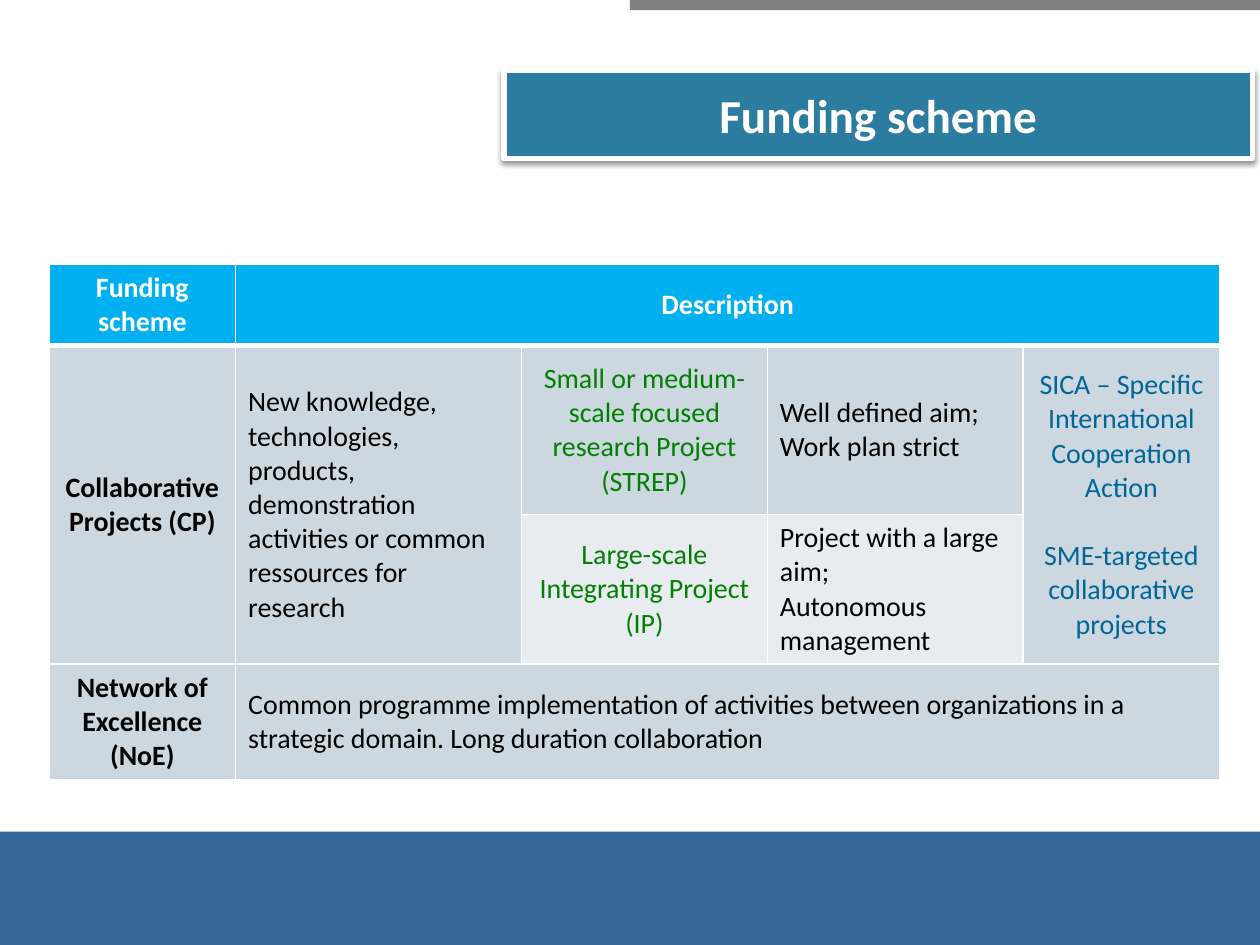
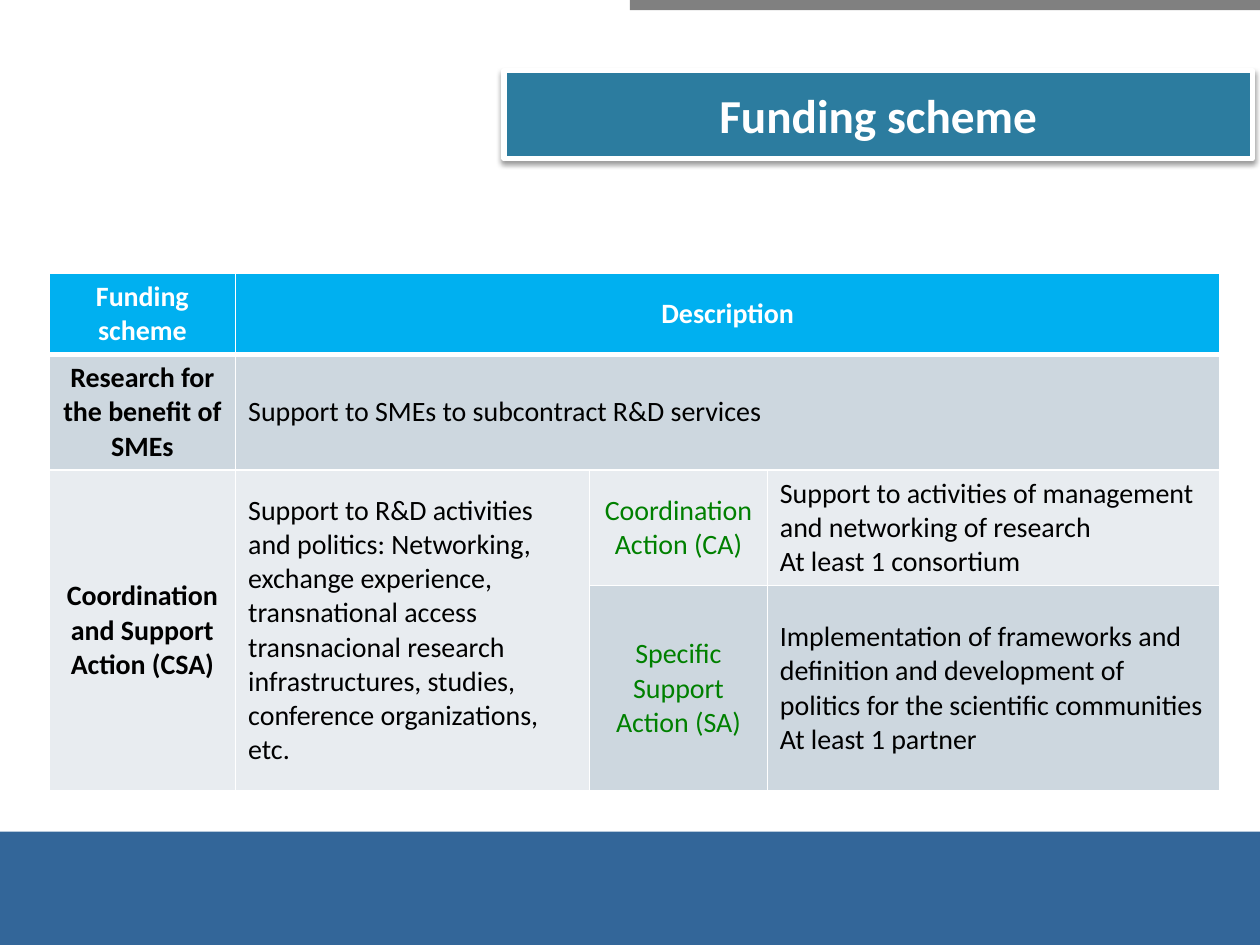
from lxml import etree
from pptx import Presentation
from pptx.dml.color import RGBColor
from pptx.enum.shapes import MSO_SHAPE
from pptx.enum.text import MSO_ANCHOR, MSO_AUTO_SIZE, PP_ALIGN
from pptx.oxml import parse_xml
from pptx.oxml.ns import nsdecls, qn
from pptx.util import Inches, Pt

RECT = MSO_SHAPE.RECTANGLE
MIDDLE = MSO_ANCHOR.MIDDLE
NO_AUTOFIT = MSO_AUTO_SIZE.NONE
LEFT, CENTER = PP_ALIGN.LEFT, PP_ALIGN.CENTER

WHITE = RGBColor(0xFF, 0xFF, 0xFF)
BLACK = RGBColor(0x00, 0x00, 0x00)
GRAY = RGBColor(0x80, 0x80, 0x80)
FOOTER_BLUE = RGBColor(0x33, 0x66, 0x99)
TITLE_TEAL = RGBColor(0x2C, 0x7C, 0x9F)
HEADER_CYAN = RGBColor(0x00, 0xB0, 0xF0)
ROW_DARK = RGBColor(0xCD, 0xD7, 0xDF)
ROW_LIGHT = RGBColor(0xE8, 0xEC, 0xF0)
GREEN = RGBColor(0x00, 0x80, 0x00)
BLUE = RGBColor(0x00, 0x66, 0x99)

HEADER = (WHITE, True, CENTER)
SCHEME = (BLACK, True, CENTER)
BODY = (BLACK, False, LEFT)
PROJECT = (GREEN, False, CENTER)
TARGETED = (BLUE, False, CENTER)

TITLE_SHADOW = (
    f'<a:effectLst {nsdecls("a")}>'
    '<a:outerShdw blurRad="39370" dist="20320" dir="5400000" rotWithShape="0">'
    '<a:srgbClr val="000000"><a:alpha val="38000"/></a:srgbClr>'
    '</a:outerShdw></a:effectLst>'
)
ROUND_RECT = f'<a:prstGeom {nsdecls("a")} prst="roundRect"><a:avLst/></a:prstGeom>'


class Deck:
    font = "Calibri"
    title_size = Pt(27)
    table_size = Pt(16)
    group_gap = Pt(19.5)

    def __init__(self):
        self.prs = Presentation()
        self.prs.slide_width = Inches(10)
        self.prs.slide_height = Inches(7.5)
        self.s = None

    def add_slide(self, title):
        self.s = self.prs.slides.add_slide(self.prs.slide_layouts[5])
        self.band(5, 0, 5, 0.08, GRAY)
        self.band(0, 6.6, 10, 0.9, FOOTER_BLUE)
        self.title(title)

    def band(self, left, top, width, height, color):
        sp = self.s.shapes.add_shape(
            RECT, Inches(left), Inches(top), Inches(width), Inches(height))
        sp.shadow.inherit = False
        sp.fill.solid()
        sp.fill.fore_color.rgb = color
        sp.line.fill.background()

    def title(self, text):
        sp = self.s.shapes.title
        sp.left, sp.top = Inches(4), Inches(0.56)
        sp.width, sp.height = Inches(5.94), Inches(0.7)
        props = sp.element.spPr
        props.append(parse_xml(ROUND_RECT))
        sp.fill.solid()
        sp.fill.fore_color.rgb = TITLE_TEAL
        sp.line.color.rgb = WHITE
        sp.line.width = Pt(3)
        props.append(parse_xml(TITLE_SHADOW))
        tf = sp.text_frame
        tf.text = text
        tf.auto_size = NO_AUTOFIT
        tf.vertical_anchor = MIDDLE
        self.format(tf.paragraphs[0], self.title_size, *HEADER)

    def format(self, p, size, color, bold, align):
        p.alignment = align
        for r in p.runs:
            r.font.name = self.font
            r.font.size = size
            r.font.bold = bold
            r.font.color.rgb = color

    def table(self, top, widths, heights, entries):
        frame = self.s.shapes.add_table(
            len(heights), len(widths), Inches(0.39), Inches(top),
            Inches(sum(widths)), Inches(sum(heights)))
        table = frame.table
        for column, width in zip(table.columns, widths):
            column.width = Inches(width)
        for i, (row, height) in enumerate(zip(table.rows, heights)):
            row.height = Inches(height)
            for cell in row.cells:
                self.borders(cell, 3 if i == 1 else 1, 3 if i == 0 else 1)
        header = [
            (0, 0, 1, 1, HEADER_CYAN, HEADER, ["Funding scheme"]),
            (0, 1, 1, len(widths) - 1, HEADER_CYAN, HEADER, ["Description"]),
        ]
        for entry in header + entries:
            self.cell(table, *entry)

    def cell(self, table, row, col, row_span, col_span, fill, style, lines):
        cell = table.cell(row, col)
        if row_span * col_span > 1:
            cell.merge(table.cell(row + row_span - 1, col + col_span - 1))
        cell.fill.solid()
        cell.fill.fore_color.rgb = fill
        cell.vertical_anchor = MIDDLE
        cell.text_frame.text = "\n".join(lines)
        for i, p in enumerate(cell.text_frame.paragraphs):
            self.format(p, self.table_size, *style)
            if i and style is TARGETED:
                p.space_before = self.group_gap

    def borders(self, cell, top, bottom):
        props = cell._tc.get_or_add_tcPr()
        for side, points in (("L", 1), ("R", 1), ("T", top), ("B", bottom)):
            line = etree.SubElement(props, qn(f"a:ln{side}"), w=str(Pt(points)))
            fill = etree.SubElement(line, qn("a:solidFill"))
            etree.SubElement(fill, qn("a:srgbClr"), val=str(WHITE))


def main():
    deck = Deck()

    deck.add_slide("Funding scheme")
    deck.table(2.1, [1.48, 2.27, 1.95, 2.03, 1.56], [0.64, 1.34, 1.18, 0.92], [
        (1, 0, 2, 1, ROW_DARK, SCHEME, ["Collaborative Projects (CP)"]),
        (1, 1, 2, 1, ROW_DARK, BODY,
         ["New knowledge, technologies, products, demonstration activities "
          "or common ressources for research"]),
        (1, 2, 1, 1, ROW_DARK, PROJECT,
         ["Small or medium-scale focused research Project (STREP)"]),
        (1, 3, 1, 1, ROW_DARK, BODY, ["Well defined aim;", "Work plan strict"]),
        (1, 4, 2, 1, ROW_DARK, TARGETED,
         ["SICA – Specific International Cooperation Action",
          "SME-targeted collaborative projects"]),
        (2, 2, 1, 1, ROW_LIGHT, PROJECT, ["Large-scale Integrating Project (IP)"]),
        (2, 3, 1, 1, ROW_LIGHT, BODY,
         ["Project with a large aim;", "Autonomous management"]),
        (3, 0, 1, 1, ROW_DARK, SCHEME, ["Network of Excellence (NoE)"]),
        (3, 1, 1, 4, ROW_DARK, BODY,
         ["Common programme implementation of activities between organizations "
          "in a strategic domain. Long duration collaboration"]),
    ])

    deck.add_slide("Funding scheme")
    deck.table(2.17, [1.48, 2.81, 1.41, 3.59], [0.64, 0.91, 0.92, 1.63], [
        (1, 0, 1, 1, ROW_DARK, SCHEME, ["Research for the benefit of SMEs"]),
        (1, 1, 1, 3, ROW_DARK, BODY,
         ["Support to SMEs to subcontract R&D services"]),
        (2, 0, 2, 1, ROW_LIGHT, SCHEME, ["Coordination and Support Action (CSA)"]),
        (2, 1, 2, 1, ROW_LIGHT, BODY,
         ["Support to R&D activities and politics: Networking, exchange "
          "experience, transnational access transnacional research "
          "infrastructures, studies, conference organizations, etc."]),
        (2, 2, 1, 1, ROW_LIGHT, PROJECT, ["Coordination Action (CA)"]),
        (2, 3, 1, 1, ROW_LIGHT, BODY,
         ["Support to activities of management and networking of research",
          "At least 1 consortium"]),
        (3, 2, 1, 1, ROW_DARK, PROJECT, ["Specific Support Action (SA)"]),
        (3, 3, 1, 1, ROW_DARK, BODY,
         ["Implementation of frameworks and definition and development of "
          "politics for the scientific communities", "At least 1 partner"]),
    ])

    deck.prs.save("out.pptx")


if __name__ == "__main__":
    main()
